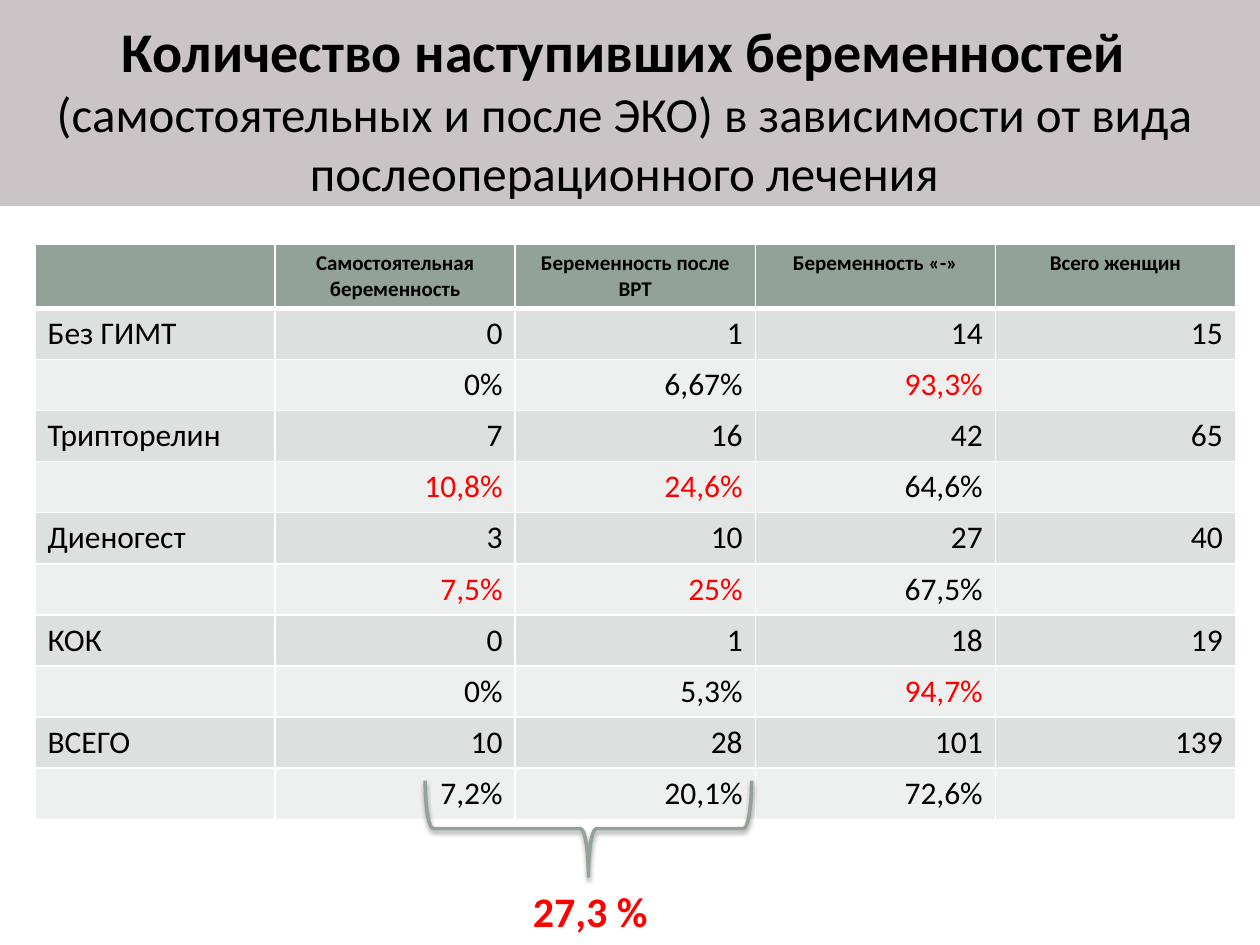
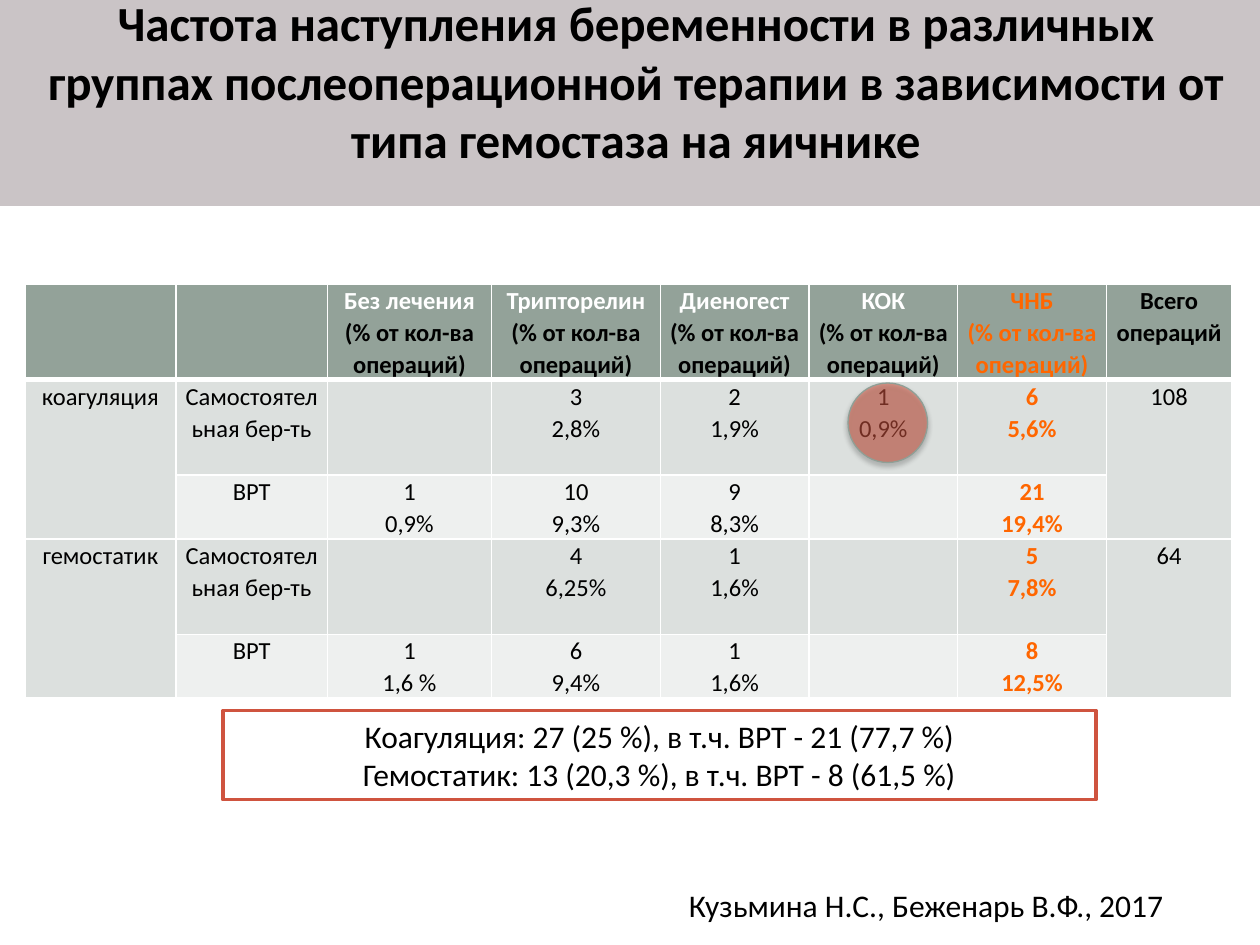
from dataclasses import dataclass

from lxml import etree
from pptx import Presentation
from pptx.dml.color import RGBColor
from pptx.enum.shapes import MSO_SHAPE
from pptx.enum.text import MSO_ANCHOR, MSO_AUTO_SIZE, PP_ALIGN
from pptx.oxml.ns import qn
from pptx.util import Pt

LEFT, CENTER, RIGHT = PP_ALIGN.LEFT, PP_ALIGN.CENTER, PP_ALIGN.RIGHT
MIDDLE = MSO_ANCHOR.MIDDLE
NO_AUTOFIT = MSO_AUTO_SIZE.NONE
RECT, BRACE, OVAL = MSO_SHAPE.RECTANGLE, MSO_SHAPE.LEFT_BRACE, MSO_SHAPE.OVAL
TITLE_ONLY = 5


@dataclass(frozen=True)
class Theme:
    font: str = "Calibri"
    black: str = "000000"
    white: str = "FFFFFF"
    band: str = "CAC4C6"
    header: str = "93A299"
    row_dark: str = "DCE0DE"
    row_light: str = "EEF0EF"
    red: str = "FF0000"
    orange: str = "FF6600"
    brick: str = "CF543F"
    oval_edge: str = "8F9F96"
    title_big: int = 32
    title: int = 28
    total: int = 24
    body: int = 18
    compact: int = 14
    small: int = 12


T = Theme()


def rgb(color):
    return RGBColor.from_string(color)


def pts(box):
    return [Pt(v) for v in box]


def set_font(font, size, color=T.black, bold=False):
    font.name = T.font
    font.size = Pt(size)
    font.bold = bold
    font.color.rgb = rgb(color)


def add_outline(s, kind, box, line, width, fill=None):
    sp = s.shapes.add_shape(kind, *pts(box))
    sp.shadow.inherit = False
    sp.line.color.rgb = rgb(line)
    sp.line.width = Pt(width)
    if fill:
        sp.fill.solid()
        sp.fill.fore_color.rgb = rgb(fill)
    else:
        sp.fill.background()
    return sp


def add_shadow(sp, opacity, distance):
    effects = sp.element.spPr.find(qn("a:effectLst"))
    shadow = etree.SubElement(effects, qn("a:outerShdw"), blurRad=str(Pt(3.1)),
                              dist=str(Pt(distance)), dir="5400000", rotWithShape="0")
    color = etree.SubElement(shadow, qn("a:srgbClr"), val=T.black)
    etree.SubElement(color, qn("a:alpha"), val=str(opacity * 1000))


def write_lines(tf, lines, size, align=LEFT, color=T.black, bold=False):
    tf.word_wrap = True
    for i, line in enumerate(lines):
        p = tf.add_paragraph() if i else tf.paragraphs[0]
        p.text = line
        p.alignment = align
        set_font(p.font, size, color, bold)


def add_label(s, box, text, size, color=T.black, bold=False, inset=7.2):
    tf = s.shapes.add_textbox(*pts(box)).text_frame
    write_lines(tf, [text], size, color=color, bold=bold)
    tf.margin_left = Pt(inset)


def add_band(s, layout):
    band = add_outline(s, RECT, (0, 0, 720, 116.6), T.band, 2, T.band)
    layout.shapes.element.insert(2, band.element)


def place_title(s, box, runs, bottom=3.6):
    title = s.shapes.title
    title.left, title.top, title.width, title.height = pts(box)
    tf = title.text_frame
    tf.auto_size = NO_AUTOFIT
    tf.word_wrap = True
    tf.vertical_anchor = MIDDLE
    tf.margin_bottom = Pt(bottom)
    p = tf.paragraphs[0]
    p.alignment = CENTER
    for text, size, bold in runs:
        r = p.add_run()
        r.text = text
        set_font(r.font, size, bold=bold)


def set_borders(cell, top, bottom):
    props = cell._tc.get_or_add_tcPr()
    for side, width in (("L", 1), ("R", 1), ("T", top), ("B", bottom)):
        line = etree.SubElement(props, qn(f"a:ln{side}"), w=str(Pt(width)))
        fill = etree.SubElement(line, qn("a:solidFill"))
        etree.SubElement(fill, qn("a:srgbClr"), val=T.white)


def add_grid(s, left, top, widths, heights, rows, fill_cell):
    box = (left, top, sum(widths), sum(heights))
    table = s.shapes.add_table(len(rows), len(widths), *pts(box)).table
    for col, width in zip(table.columns, widths):
        col.width = Pt(width)
    for row, height in zip(table.rows, heights):
        row.height = Pt(height)
    for i, row in enumerate(rows):
        for j, text in enumerate(row):
            cell = table.cell(i, j)
            set_borders(cell, 3 if i == 1 else 1, 1 if i else 3)
            cell.fill.solid()
            color = T.header if i == 0 else T.row_dark if i % 2 else T.row_light
            cell.fill.fore_color.rgb = rgb(color)
            if text:
                fill_cell(cell, i, j, text)
    return table


def fill_outcome(cell, i, j, text):
    highlights = {"93,3%", "10,8%", "24,6%", "7,5%", "25%", "94,7%"}
    if i == 0:
        write_lines(cell.text_frame, [text], T.small, CENTER, bold=True)
    else:
        color = T.red if text in highlights else T.black
        write_lines(cell.text_frame, [text], T.body, RIGHT if j else LEFT, color)


def fill_frequency(cell, i, j, text):
    rate_column = j == 6
    color = T.orange if rate_column else T.black
    cell.margin_left = cell.margin_right = Pt(5)
    cell.margin_top = cell.margin_bottom = 0
    tf = cell.text_frame
    write_lines(tf, text.split("\n"), T.compact, CENTER, color, i == 0 or rate_column)
    for p in tf.paragraphs:
        p.line_spacing = 1.07
    if i == 0 and 2 <= j <= 5:
        tf.paragraphs[0].font.color.rgb = rgb(T.white)


def build_outcomes(s):
    place_title(s, (25.2, 49, 663, 56), [
        ("Количество наступивших беременностей ", T.title_big, True),
        ("(самостоятельных и после ЭКО) в зависимости от вида "
         "послеоперационного лечения", T.title, False)], bottom=33)
    rows = [
        ("", "Самостоятельная беременность", "Беременность после ВРТ",
         "Беременность «-»", "Всего женщин"),
        ("Без ГИМТ", "0", "1", "14", "15"),
        ("", "0%", "6,67%", "93,3%", ""),
        ("Трипторелин", "7", "16", "42", "65"),
        ("", "10,8%", "24,6%", "64,6%", ""),
        ("Диеногест", "3", "10", "27", "40"),
        ("", "7,5%", "25%", "67,5%", ""),
        ("КОК", "0", "1", "18", "19"),
        ("", "0%", "5,3%", "94,7%", ""),
        ("ВСЕГО", "10", "28", "101", "139"),
        ("", "7,2%", "20,1%", "72,6%", ""),
    ]
    add_grid(s, 20, 139.7, [137.2] * 5, [36] + [29.2] * 10, rows, fill_outcome)
    brace = add_outline(s, BRACE, (308.9, 380.2, 54.7, 186.5), T.header, 2)
    brace.rotation = 270
    add_shadow(brace, 38, 1.6)
    add_label(s, (297.4, 502.6, 85, 36), "27,3 %", T.total, T.red, True)


def build_frequency(s):
    place_title(s, (14.4, 26.6, 697.7, 38.9), [
        ("Частота наступления беременности в различных группах послеоперационной "
         "терапии в зависимости от типа гемостаза на яичнике", T.title, True)])
    share = "\n(% от кол-ва операций)"
    drugs = ("Без лечения", "Трипторелин", "Диеногест", "КОК", "ЧНБ")
    natural = "Самостоятельная бер-ть"
    rows = [
        ("", "", *(drug + share for drug in drugs), "Всего операций"),
        ("коагуляция", natural, "", "3\n2,8%", "2\n1,9%", "1\n0,9%", "6\n5,6%", "108"),
        ("", "ВРТ", "1\n0,9%", "10\n9,3%", "9\n8,3%", "", "21\n19,4%", ""),
        ("гемостатик", natural, "", "4\n6,25%", "1\n1,6%", "", "5\n7,8%", "64"),
        ("", "ВРТ", "\u00a01\n1,6 %".replace("\u00a0", ""), "6\n9,4%", "1\n1,6%", "",
         "8\n12,5%", ""),
    ]
    widths = [86.4, 86.4, 94, 96.3, 85, 85, 85, 71.7]
    table = add_grid(s, 14.2, 162.3, widths, [54.5] + [54.5, 36.5] * 2, rows, fill_frequency)
    for first in (1, 3):
        for col in (0, 7):
            table.cell(first, col).merge(table.cell(first + 1, col))
    summary = add_outline(s, RECT, (127.4, 406, 499, 51), T.brick, 2, T.white)
    summary.text_frame.vertical_anchor = MIDDLE
    write_lines(summary.text_frame, [
        "Коагуляция: 27 (25 %), в т.ч. ВРТ - 21 (77,7 %)",
        "Гемостатик: 13 (20,3 %), в т.ч. ВРТ - 8 (61,5 %)"], T.body, CENTER)
    add_label(s, (382.3, 502.6, 323.3, 29), "Кузьмина Н.С., Беженарь В.Ф., 2017",
              T.body, inset=11.3)
    marker = add_outline(s, OVAL, (484.6, 218.9, 45.4, 45.4), T.oval_edge, 0.75, T.brick)
    fill = marker.element.spPr.find(qn("a:solidFill"))
    etree.SubElement(fill[0], qn("a:alpha"), val="54000")
    add_shadow(marker, 35, 1.8)


def main():
    prs = Presentation()
    prs.slide_width, prs.slide_height = Pt(720), Pt(540)
    layout = prs.slide_layouts[TITLE_ONLY]
    for i, build in enumerate((build_outcomes, build_frequency)):
        s = prs.slides.add_slide(layout)
        if i == 0:
            add_band(s, layout)
        build(s)
    prs.save("out.pptx")


if __name__ == "__main__":
    main()
